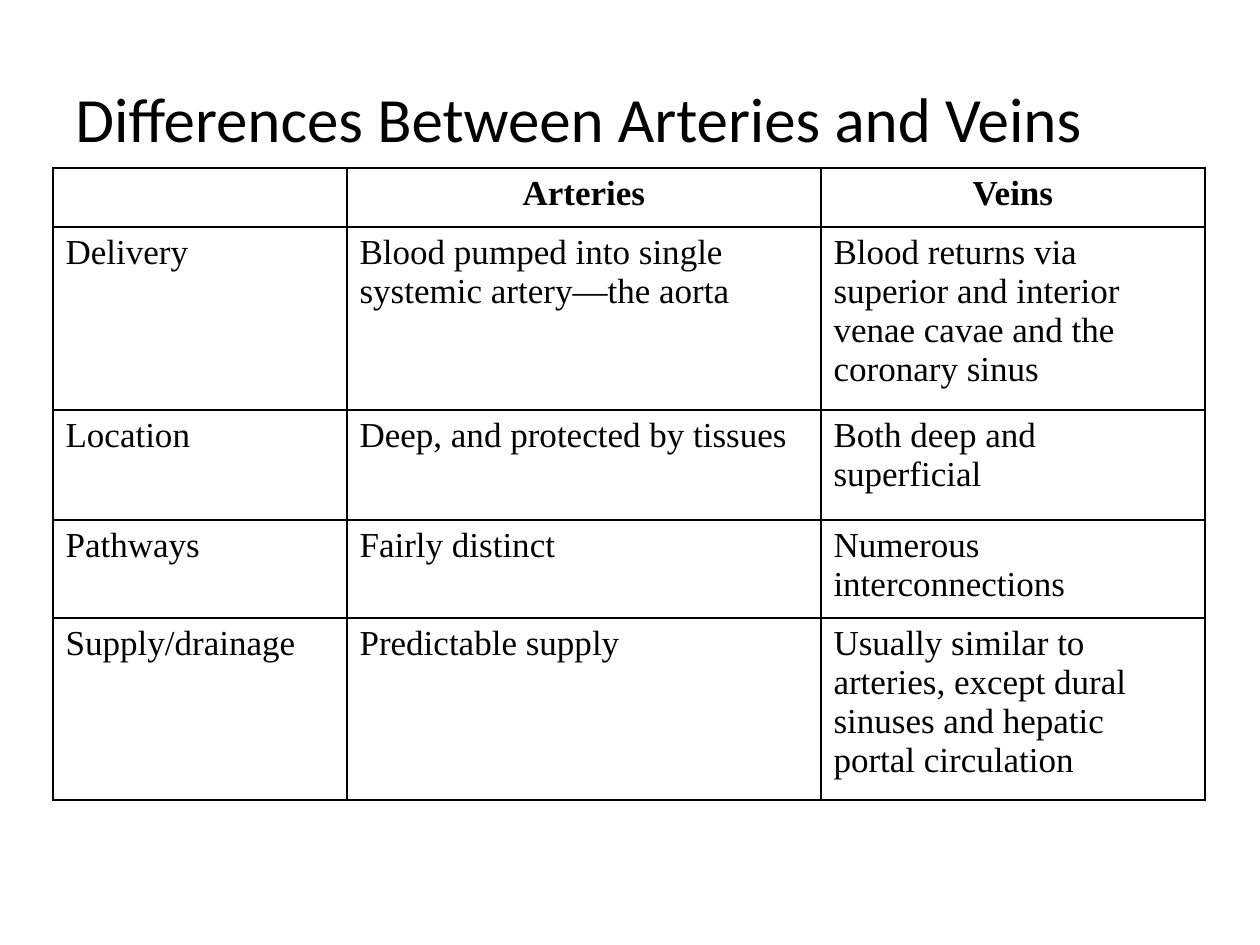
import lxml.etree
import pptx
import pptx.dml.color
import pptx.enum.text
import pptx.oxml.ns
import pptx.util

ALIGN = pptx.enum.text.PP_ALIGN
ANCHOR = pptx.enum.text.MSO_ANCHOR
BLACK, WHITE = "000000", "FFFFFF"
COLUMN_WIDTHS = [294, 474, 384]
ROW_HEIGHTS = [59, 183, 110, 98, 182]
ROWS = [
    ["", "Arteries", "Veins"],
    ["Delivery", "Blood pumped into single systemic artery—the aorta",
     "Blood returns via superior and interior venae cavae and the coronary sinus"],
    ["Location", "Deep, and protected by tissues", "Both deep and superficial"],
    ["Pathways", "Fairly distinct", "Numerous interconnections"],
    ["Supply/drainage", "Predictable supply",
     "Usually similar to arteries, except dural sinuses and hepatic portal circulation"],
]


def px(length):
    return pptx.util.Emu(round(length * 914400 / 126))


def color(value):
    return pptx.dml.color.RGBColor.from_string(value)


class SlideBuilder:
    """Holds the text styles and the current slide."""

    title_font = {"name": "Calibri", "size": pptx.util.Pt(36), "bold": False}
    header_font = {"name": "Times New Roman", "size": pptx.util.Pt(20), "bold": True}
    body_font = {**header_font, "bold": False}

    def __init__(self, slide):
        self.slide = slide

    def add_text(self, text_frame, text, font, alignment=ALIGN.LEFT):
        paragraph = text_frame.paragraphs[0]
        paragraph.alignment = alignment
        run = paragraph.add_run()
        run.text = text
        for name, value in font.items():
            setattr(run.font, name, value)
        run.font.color.rgb = color(BLACK)

    def title(self, text, left, top, width, height):
        shape = self.slide.shapes.add_textbox(px(left), px(top), px(width), px(height))
        shape.text_frame.word_wrap = True
        shape.text_frame.vertical_anchor = ANCHOR.MIDDLE
        self.add_text(shape.text_frame, text, self.title_font)

    def borders(self, cell):
        properties = cell._tc.get_or_add_tcPr()
        for index, side in enumerate(("lnL", "lnR", "lnT", "lnB")):
            line = lxml.etree.Element(pptx.oxml.ns.qn(f"a:{side}"), w=str(pptx.util.Pt(1)))
            fill = lxml.etree.SubElement(line, pptx.oxml.ns.qn("a:solidFill"))
            lxml.etree.SubElement(fill, pptx.oxml.ns.qn("a:srgbClr"), val=BLACK)
            properties.insert(index, line)

    def table(self, rows, left, top, column_widths, row_heights):
        table = self.slide.shapes.add_table(
            len(rows), len(column_widths), px(left), px(top),
            px(sum(column_widths)), px(sum(row_heights))).table
        table.first_row = table.horz_banding = False
        for column, width in zip(table.columns, column_widths):
            column.width = px(width)
        for row, height in zip(table.rows, row_heights):
            row.height = px(height)
        for row_index, texts in enumerate(rows):
            header = row_index == 0
            font = self.header_font if header else self.body_font
            alignment = ALIGN.CENTER if header else ALIGN.LEFT
            for column_index, text in enumerate(texts):
                cell = table.cell(row_index, column_index)
                cell.fill.solid()
                cell.fill.fore_color.rgb = color(WHITE)
                self.borders(cell)
                if text:
                    self.add_text(cell.text_frame, text, font, alignment)


def main():
    presentation = pptx.Presentation()
    presentation.slide_width, presentation.slide_height = px(1260), px(945)
    builder = SlideBuilder(presentation.slides.add_slide(presentation.slide_layouts[6]))
    builder.table(ROWS, 53, 168, COLUMN_WIDTHS, ROW_HEIGHTS)
    builder.title("Differences Between Arteries and Veins", 63, 38, 1134, 158)
    presentation.save("out.pptx")


if __name__ == "__main__":
    main()
